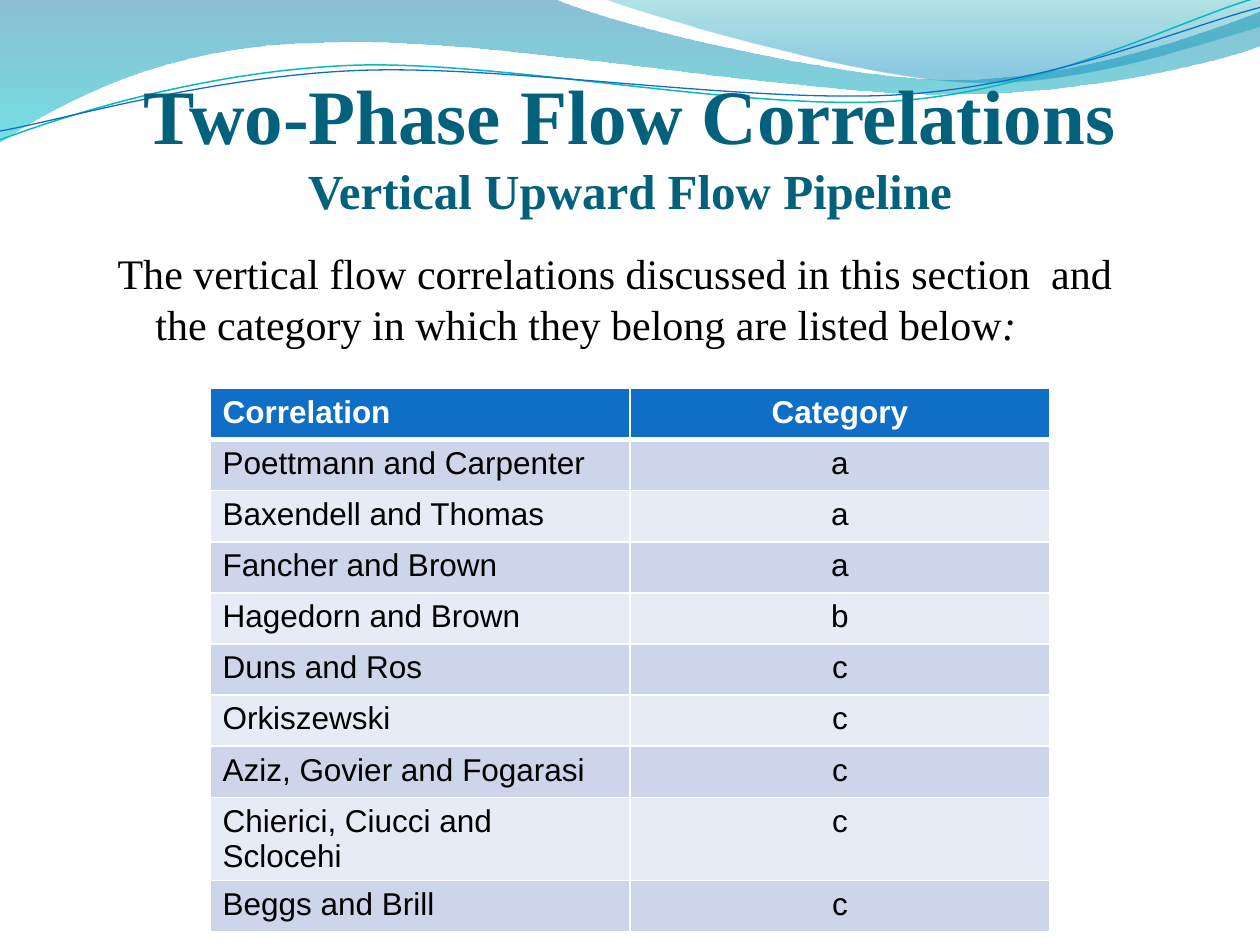
"""Build the slide that lists vertical two-phase flow correlations by category."""
import math
from dataclasses import dataclass

import lxml.etree
import pptx
import pptx.dml.color
import pptx.enum.text
import pptx.oxml.ns
import pptx.shapes.autoshape
import pptx.slide
import pptx.table
import pptx.text.text
import pptx.util

RGBColor = pptx.dml.color.RGBColor
Pt = pptx.util.Pt
qn = pptx.oxml.ns.qn
Alignment = pptx.enum.text.PP_ALIGN

WHITE = RGBColor(0xFF, 0xFF, 0xFF)
BLACK = RGBColor(0x00, 0x00, 0x00)
TITLE_TEAL = RGBColor(0x04, 0x61, 0x7B)
HEADER_BLUE = RGBColor(0x0F, 0x6F, 0xC6)
LINE_TEAL = RGBColor(0x0A, 0xB8, 0xBF)
DEEP_BLUE = RGBColor(0x00, 0x74, 0xA1)
CYAN = RGBColor(0x00, 0xC6, 0xCF)
SEA_GREEN = RGBColor(0x00, 0xA1, 0xA9)
SKY_BLUE = RGBColor(0x00, 0x8B, 0xBF)
BANDS = (RGBColor(0xCC, 0xD5, 0xEA), RGBColor(0xE7, 0xEB, 0xF5))

SERIF = "Times New Roman"
SANS = "Arial"
STRAND_TILT = -2.7
ROW_HEIGHT = 29.2
COLUMN_WIDTH = 240

Point = tuple[float, float]
Segment = tuple[Point, ...]


@dataclass(frozen=True)
class Stop:
    """A gradient stop with its opacity in percent."""
    position: float
    color: RGBColor
    opacity: int


@dataclass(frozen=True)
class Wave:
    """A filled outline of straight (one point) and curved (three point) segments."""
    start: Point
    segments: tuple[Segment, ...]
    stops: tuple[Stop, Stop]


@dataclass(frozen=True)
class Strand:
    """A thin open curve that is tilted about its center."""
    center: Point
    start: Point
    segments: tuple[Segment, ...]
    color: RGBColor
    width: float


@dataclass(frozen=True)
class Correlation:
    """One row of the table."""
    name: str
    category: str


WAVES = (
    Wave((0, -0.7), (
        ((316.8, -0.7),),
        ((342.7, 12.2), (478.1, 45.4), (545.8, 45.4)),
        ((614.2, 45.4), (689.8, 18.7), (720, 6.5)),
        ((720.7, 25.9),),
        ((707.8, 31.7), (626.4, 54.7), (537.1, 54)),
        ((447.8, 54), (275, 20.2), (185, 24.5)),
        ((92.9, 25.2), (33.1, 59.8), (-0.7, 81.4)),
        ((0, -0.7),),
    ), (Stop(0, DEEP_BLUE, 45), Stop(1, CYAN, 55))),
    Wave((344.9, -0.7), (
        ((366.5, 7.9), (491, 44.6), (553.7, 46.8)),
        ((616.3, 49.7), (691.9, 23), (720, 15.1)),
        ((720, 0),),
        ((344.9, -0.7),),
    ), (Stop(0, SEA_GREEN, 30), Stop(0.8, SKY_BLUE, 45))),
)

STRANDS = (
    Strand((359.3, 41.4), (0, 79.9), (
        ((34.6, 67), (113.8, 41), (199.4, 37.4)),
        ((284.4, 33.8), (427, 64.1), (513.4, 57.6)),
        ((599.8, 51.1), (675.4, 10.8), (718.6, -1.4)),
    ), LINE_TEAL, 0.85),
    Strand((359.6, 42.5), (0, 74.9), (
        ((33.8, 69.1), (118.1, 43.9), (203.8, 40.3)),
        ((290.2, 36.7), (429.8, 59.8), (516.2, 54)),
        ((601.9, 48.2), (677.5, 15.1), (720, 4.3)),
    ), HEADER_BLUE, 0.75),
)

CORRELATIONS = (
    Correlation("Poettmann and Carpenter", "a"),
    Correlation("Baxendell and Thomas", "a"),
    Correlation("Fancher and Brown", "a"),
    Correlation("Hagedorn and Brown", "b"),
    Correlation("Duns and Ros", "c"),
    Correlation("Orkiszewski", "c"),
    Correlation("Aziz, Govier and Fogarasi", "c"),
    Correlation("Chierici, Ciucci and Sclocehi", "c"),
    Correlation("Beggs and Brill", "c"),
)


def level(point: Point, center: Point) -> Point:
    """Return where a point of a tilted strand lies before the tilt."""
    angle = math.radians(-STRAND_TILT)
    x, y = point[0] - center[0], point[1] - center[1]
    return (center[0] + x * math.cos(angle) - y * math.sin(angle),
            center[1] + x * math.sin(angle) + y * math.cos(angle))


def draw_outline(slide: pptx.slide.Slide, start: Point, segments: tuple[Segment, ...],
                 close: bool) -> pptx.shapes.autoshape.Shape:
    """Draw lines and Bezier curves as a freeform without a shadow."""
    builder = slide.shapes.build_freeform(*map(Pt, start))
    builder.add_line_segments([(Pt(x), Pt(y)) for segment in segments for x, y in segment], close=close)
    shape = builder.convert_to_shape()
    shape.shadow.inherit = False
    lines = iter(list(shape.element.iter(qn("a:lnTo"))))
    for segment in segments:
        first, *others = [next(lines) for _ in segment]
        if others:
            first.tag = qn("a:cubicBezTo")
        for line in others:
            first.append(line[0])
            line.getparent().remove(line)
    return shape


def draw_wave(slide: pptx.slide.Slide, wave: Wave) -> None:
    """Draw a wave with a translucent gradient from top to bottom."""
    shape = draw_outline(slide, wave.start, wave.segments, True)
    shape.line.fill.background()
    shape.fill.gradient()
    shape.fill.gradient_angle = 270
    for gradient_stop, stop in zip(shape.fill.gradient_stops, wave.stops):
        gradient_stop.position = stop.position
        gradient_stop.color.rgb = stop.color
    for color, stop in zip(shape.element.spPr.iter(qn("a:srgbClr")), wave.stops):
        lxml.etree.SubElement(color, qn("a:alpha"), val=str(stop.opacity * 1000))


def draw_strand(slide: pptx.slide.Slide, strand: Strand) -> None:
    """Draw a strand as a tilted line."""
    segments = tuple(tuple(level(point, strand.center) for point in segment) for segment in strand.segments)
    shape = draw_outline(slide, level(strand.start, strand.center), segments, False)
    shape.rotation = STRAND_TILT
    shape.fill.background()
    shape.line.color.rgb = strand.color
    shape.line.width = Pt(strand.width)


def set_font(font: pptx.text.text.Font, name: str, color: RGBColor, bold: bool, size: float | None = None) -> None:
    """Set the look of a font."""
    font.name, font.bold = name, bold
    font.color.rgb = color
    if size:
        font.size = Pt(size)


def place(slide: pptx.slide.Slide, shape: pptx.shapes.autoshape.Shape, left: float, top: float,
          width: float, height: float) -> pptx.text.text.TextFrame:
    """Bring a placeholder to the front, set its frame and return its text frame."""
    slide.shapes.element.append(shape.element)
    shape.left, shape.top, shape.width, shape.height = map(Pt, (left, top, width, height))
    shape.text_frame.auto_size = pptx.enum.text.MSO_AUTO_SIZE.NONE
    return shape.text_frame


def fill_title(slide: pptx.slide.Slide) -> None:
    """Write the two-line title."""
    frame = place(slide, slide.shapes.title, 36, 42, 648, 76.3)
    frame.vertical_anchor = pptx.enum.text.MSO_ANCHOR.MIDDLE
    frame.margin_left = frame.margin_right = frame.margin_bottom = 0
    paragraph = frame.paragraphs[0]
    paragraph.alignment = Alignment.CENTER
    set_font(paragraph.font, SERIF, TITLE_TEAL, True)
    for text, size in (("Two-Phase Flow Correlations", 44), ("Vertical Upward Flow Pipeline", 28)):
        if paragraph.runs:
            paragraph.add_line_break()
        run = paragraph.add_run()
        run.text, run.font.size = text, Pt(size)


def fill_body(slide: pptx.slide.Slide) -> None:
    """Write the introduction with a hanging indent."""
    paragraph = place(slide, slide.placeholders[1], 60, 138, 600, 78).paragraphs[0]
    paragraph.space_before, paragraph.line_spacing = Pt(0), 1.0
    set_font(paragraph.font, SERIF, BLACK, False, 24)
    paragraph.add_run().text = ("The vertical flow correlations discussed in this section  and "
                                "the category in which they belong are listed below")
    colon = paragraph.add_run()
    colon.text, colon.font.italic = ":", True
    properties = paragraph._p.get_or_add_pPr()
    properties.set("marL", str(Pt(21.6)))
    properties.set("indent", str(Pt(-36)))
    properties.insert_element_before(lxml.etree.Element(qn("a:buNone")), "a:defRPr")


def fill_cell(cell: pptx.table._Cell, text: str, alignment: Alignment, fill: RGBColor, header: bool) -> None:
    """Write and colour one cell with white borders."""
    properties = cell._tc.get_or_add_tcPr()
    for side in "LRTB":
        width = 3 if header and side == "B" else 1
        border = lxml.etree.SubElement(properties, qn(f"a:ln{side}"), w=str(Pt(width)))
        solid = lxml.etree.SubElement(border, qn("a:solidFill"))
        lxml.etree.SubElement(solid, qn("a:srgbClr"), val=str(WHITE))
    cell.fill.solid()
    cell.fill.fore_color.rgb = fill
    cell.text = text
    paragraph = cell.text_frame.paragraphs[0]
    paragraph.alignment = alignment
    set_font(paragraph.font, SANS, WHITE if header else BLACK, header, 18)


def draw_table(slide: pptx.slide.Slide) -> None:
    """Draw the table of correlations."""
    rows = (Correlation("Correlation", "Category"), *CORRELATIONS)
    table = slide.shapes.add_table(len(rows), 2, Pt(120), Pt(222), Pt(2 * COLUMN_WIDTH),
                                   Pt(len(rows) * ROW_HEIGHT)).table
    for index, row in enumerate(rows):
        fill = BANDS[(index - 1) % 2] if index else HEADER_BLUE
        for column, (text, alignment) in enumerate(((row.name, Alignment.LEFT), (row.category, Alignment.CENTER))):
            fill_cell(table.cell(index, column), text, alignment, fill, index == 0)


def main() -> None:
    """Build and save the presentation."""
    presentation = pptx.Presentation()
    presentation.slide_width, presentation.slide_height = Pt(720), Pt(540)
    slide = presentation.slides.add_slide(presentation.slide_layouts[1])
    for wave in WAVES:
        draw_wave(slide, wave)
    for strand in STRANDS:
        draw_strand(slide, strand)
    fill_title(slide)
    fill_body(slide)
    draw_table(slide)
    presentation.save("out.pptx")


if __name__ == "__main__":
    main()
